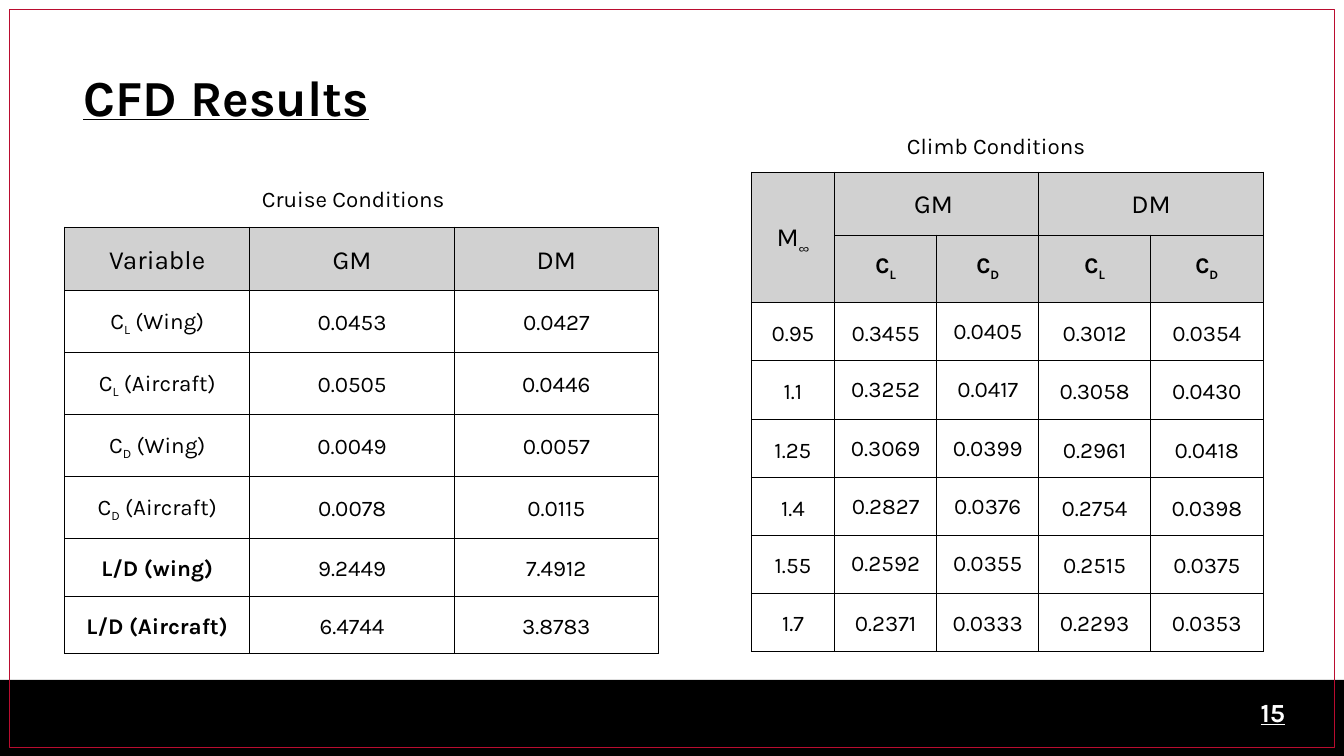
from lxml import etree
from pptx import Presentation
from pptx import util as u
from pptx.dml import color
from pptx.enum import shapes, text
from pptx.oxml import ns

HEX = {"black": "000000", "white": "FFFFFF", "red": "BA0C2F", "grey": "D1D1D1"}
RGB = {name: color.RGBColor.from_string(code) for name, code in HEX.items()}
MID, TOP = text.MSO_ANCHOR.MIDDLE, text.MSO_ANCHOR.TOP


def write(frame, words, size=12, tint="black", bold=False, line=False,
          align=text.PP_ALIGN.LEFT, lead=1.0):
    """Fill a text frame; the letter after an underscore is a subscript."""
    para = frame.paragraphs[0]
    para.alignment = align
    para.line_spacing = lead
    head, _, rest = words.partition("_")
    for part, base in ((head, 0), (rest[:1], -25000), (rest[1:], 0)):
        if not part:
            continue
        run = para.add_run()
        run.text = part
        font = run.font
        font.name, font.size = "Karla", u.Pt(size)
        font.bold, font.underline = bold, line
        font.color.rgb = RGB[tint]
        if base:
            run._r.get_or_add_rPr().set("baseline", str(base))


def border(cell):
    props = cell._tc.get_or_add_tcPr()
    for side in ("L", "R", "T", "B"):
        edge = etree.SubElement(props, ns.qn("a:ln" + side), w=str(u.Pt(0.6)))
        fill = etree.SubElement(edge, ns.qn("a:solidFill"))
        etree.SubElement(fill, ns.qn("a:srgbClr"), val=HEX["black"])


deck = Presentation()
deck.slide_width = u.Inches(10)
deck.slide_height = deck.slide_width * 9 // 16
slide = deck.slides.add_slide(deck.slide_layouts[6])

# Footer bar and page frame
rect = shapes.MSO_SHAPE.RECTANGLE
bar = slide.shapes.add_shape(
    rect, u.Inches(0), u.Inches(5.06), u.Inches(10), u.Inches(0.57))
bar.fill.solid()
bar.fill.fore_color.rgb = RGB["black"]
bar.line.fill.background()
frame = slide.shapes.add_shape(
    rect, u.Inches(0.07), u.Inches(0.07), u.Inches(9.86), u.Inches(5.49))
frame.fill.background()
frame.line.color.rgb = RGB["red"]
frame.line.width = u.Pt(0.75)
for shape in (bar, frame):
    shape.shadow.inherit = False

# Page number, title and captions: place, side inset, top inset, anchor, format
labels = [
    ("15", (9.31, 5.15, 0.58, 0.3), 0.07, 0.04, MID,
     dict(size=14, tint="white", bold=True, line=True)),
    ("CFD Results", (0.55, 0.45, 8.95, 0.56), 0.07, 0.04, TOP,
     dict(size=27, bold=True, line=True)),
    ("Cruise Conditions", (1.85, 1.28, 1.69, 0.32), 0.1, 0.1, TOP, {}),
    ("Climb Conditions", (6.65, 0.88, 1.69, 0.32), 0.1, 0.1, TOP, {}),
]
for words, place, side, top, anchor, style in labels:
    box = slide.shapes.add_textbox(*map(u.Inches, place)).text_frame
    box.word_wrap = True
    box.vertical_anchor = anchor
    box.margin_left = box.margin_right = u.Inches(side)
    box.margin_top = box.margin_bottom = u.Inches(top)
    write(box, words, **style)

cruise = dict(
    at=(0.48, 1.69), heads=1, merge=[],
    cols=[1.38, 1.52, 1.52],
    rows=[0.41, 0.38, 0.44, 0.43, 0.43, 0.38, 0.38],
    bold={(5, 0), (6, 0)}, tight=set(),
    data=[
        ["Variable", "GM", "DM"],
        ["C_L (Wing)", "0.0453", "0.0427"],
        ["C_L (Aircraft)", "0.0505", "0.0446"],
        ["C_D (Wing)", "0.0049", "0.0057"],
        ["C_D (Aircraft)", "0.0078", "0.0115"],
        ["L/D (wing)", "9.2449", "7.4912"],
        ["L/D (Aircraft)", "6.4744", "3.8783"],
    ])
climb = dict(
    at=(5.59, 1.28), heads=2,
    merge=[(0, 0, 1, 0), (0, 1, 0, 2), (0, 3, 0, 4)],
    cols=[0.62, 0.76, 0.76, 0.83, 0.84],
    rows=[0.41, 0.38, 0.38, 0.44, 0.43, 0.43, 0.38, 0.38],
    bold={(1, col) for col in range(1, 5)},
    tight={(row, col) for row in range(2, 7) for col in (1, 2)} - {(2, 1)},
    data=[
        ["M_∞", "GM ", "", "DM", ""],
        ["", "C_L", "C_D", "C_L", "C_D"],
        ["0.95", "0.3455", "0.0405", "0.3012", "0.0354"],
        ["1.1", "0.3252", "0.0417", "0.3058", "0.0430"],
        ["1.25", "0.3069", "0.0399", "0.2961", "0.0418"],
        ["1.4", "0.2827", "0.0376", "0.2754", "0.0398"],
        ["1.55", "0.2592", "0.0355", "0.2515", "0.0375"],
        ["1.7", "0.2371", "0.0333", "0.2293", "0.0353"],
    ])

for plan in (cruise, climb):
    cols, rows = plan["cols"], plan["rows"]
    size = (*plan["at"], 3.28, 3.28)
    table = slide.shapes.add_table(
        len(rows), len(cols), *map(u.Inches, size)).table
    table.first_row = table.horz_banding = False
    for col, width in zip(table.columns, cols):
        col.width = u.Inches(width)
    for row, height in zip(table.rows, rows):
        row.height = u.Inches(height)
    for top, left, low, right in plan["merge"]:
        table.cell(top, left).merge(table.cell(low, right))

    for r, values in enumerate(plan["data"]):
        for c, words in enumerate(values):
            cell = table.cell(r, c)
            border(cell)
            head = r < plan["heads"]
            if head:
                cell.fill.solid()
                cell.fill.fore_color.rgb = RGB["grey"]
            else:
                cell.fill.background()
            cell.margin_left = cell.margin_right = u.Inches(0.07)
            cell.margin_top = cell.margin_bottom = u.Inches(0.1)
            tall = cell.is_merge_origin and cell.span_height > 1
            cell.vertical_anchor = TOP if head and not tall else MID
            write(cell.text_frame, words,
                  size=14 if r == 0 else 12,
                  bold=(r, c) in plan["bold"],
                  align=text.PP_ALIGN.CENTER,
                  lead=1.0 if (r, c) in plan["tight"] else 1.15)

deck.save("out.pptx")
